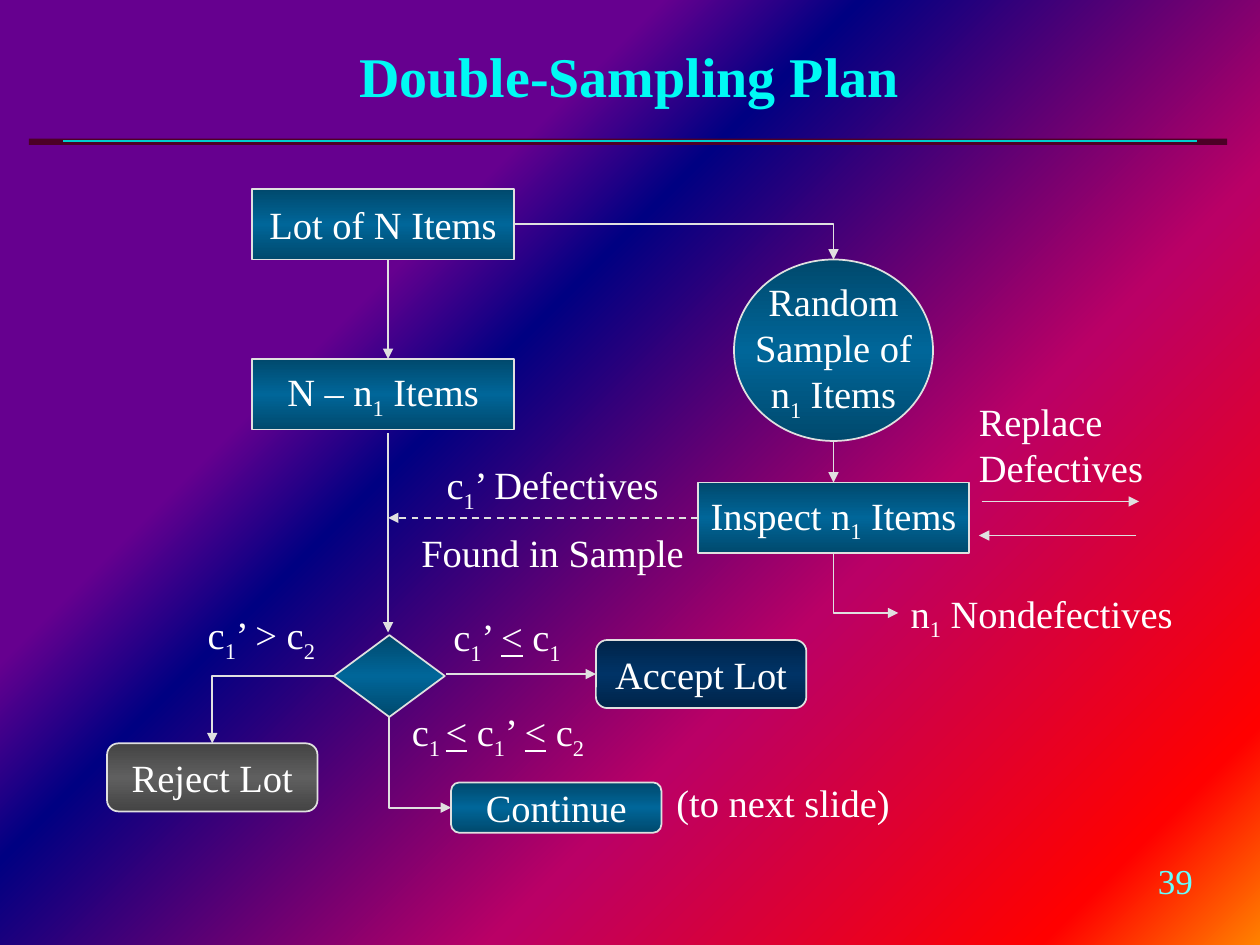
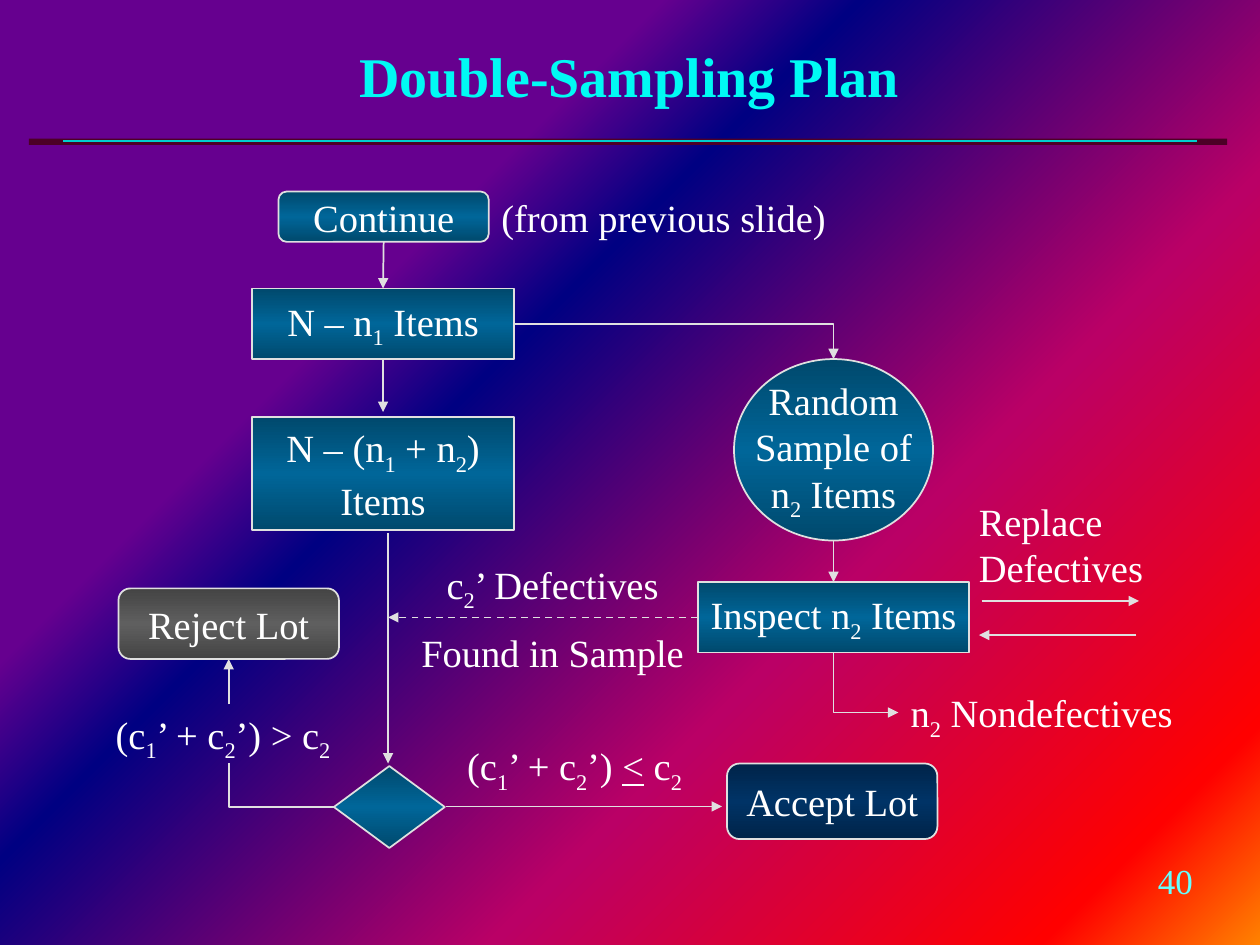
from collections import namedtuple

from lxml.etree import SubElement
from pptx import Presentation
from pptx.dml.color import RGBColor
from pptx.enum.dml import MSO_LINE
from pptx.enum.shapes import MSO_CONNECTOR, MSO_SHAPE
from pptx.enum.text import MSO_ANCHOR, MSO_AUTO_SIZE, PP_ALIGN
from pptx.oxml.ns import qn
from pptx.util import Inches, Pt

SLIDE_W, SLIDE_H = Inches(10), Inches(7.5)
COL, ROW = SLIDE_W / 100, SLIDE_H / 75

WHITE = RGBColor(0xFF, 0xFF, 0xFF)
BLACK = RGBColor(0x00, 0x00, 0x00)
OUTLINE = RGBColor(0xE0, 0xE0, 0xE0)
TITLE_CYAN = RGBColor(0x00, 0xFA, 0xF4)
NUMBER_CYAN = RGBColor(0x66, 0xFF, 0xFF)
RULE_TEAL = RGBColor(0x00, 0xCE, 0xCE)
BAND_MAROON = RGBColor(0x4C, 0x00, 0x26)
VIOLET = RGBColor(0x66, 0x00, 0x8F)
INDIGO = RGBColor(0x00, 0x00, 0x82)
MAGENTA = RGBColor(0xBA, 0x00, 0x66)
RED = RGBColor(0xFF, 0x00, 0x00)
ORANGE = RGBColor(0xFF, 0x82, 0x00)

BLUE = (RGBColor(0x00, 0x49, 0x6D), RGBColor(0x00, 0x66, 0x99))
NAVY = (RGBColor(0x00, 0x24, 0x49), RGBColor(0x00, 0x33, 0x66))
GREY = (RGBColor(0x44, 0x44, 0x44), RGBColor(0x5F, 0x5F, 0x5F))
SUNSET = [(30, VIOLET), (39, INDIGO), (65, MAGENTA), (90, RED), (100, ORANGE)]

RECT, ROUNDED = MSO_SHAPE.RECTANGLE, MSO_SHAPE.ROUNDED_RECTANGLE
OVAL, DIAMOND = MSO_SHAPE.OVAL, MSO_SHAPE.DIAMOND
STRAIGHT, ELBOW = MSO_CONNECTOR.STRAIGHT, MSO_CONNECTOR.ELBOW
LEFT_ALIGN, CENTER = PP_ALIGN.LEFT, PP_ALIGN.CENTER
MIDDLE, FIT_TEXT = MSO_ANCHOR.MIDDLE, MSO_AUTO_SIZE.SHAPE_TO_FIT_TEXT
DASH = MSO_LINE.DASH
TOP, LEFT, BOTTOM, RIGHT = range(4)

BODY_FONT = {"name": "Times New Roman", "size": Pt(22), "bold": False}
TITLE_FONT = {**BODY_FONT, "size": Pt(32), "bold": True}
NUMBER_FONT = {**BODY_FONT, "size": Pt(20)}

Area = namedtuple("Area", "left top width height")
Joint = namedtuple("Joint", "shape side")
PAGE = Area(0, 0, 100, 75)


def apply(target, values):
    """Set every attribute named in a dict of format values."""
    for name, value in values.items():
        setattr(target, name, value)


def place(area, x, y):
    """Turn grid cells counted from an area's corner into slide lengths."""
    return round((area.left + x) * COL), round((area.top + y) * ROW)


def bounds(area, box):
    """Give left, top, width and height of a box inside an area."""
    x, y, width, height = box
    return (*place(area, x, y), round(width * COL), round(height * ROW))


def blend(fill, owner, stops, angle):
    """Fill with a linear gradient of (percent, colour) stops."""
    fill.gradient()
    fill.gradient_angle = angle
    stop_list = owner.element.find(".//" + qn("a:gsLst"))
    stop_list.clear()
    for percent, color in stops:
        stop = SubElement(stop_list, qn("a:gs"), pos=str(percent * 1000))
        SubElement(stop, qn("a:srgbClr"), val=str(color))


def write(frame, text, align, font=BODY_FONT, color=WHITE, gap=0):
    """Write lines whose |-parts may be lowered (_) or underlined (*)."""
    for index, line in enumerate(text.split("\n")):
        paragraph = frame.paragraphs[0] if index == 0 else frame.add_paragraph()
        apply(paragraph, {"alignment": align, "space_before": Pt(gap if index else 0)})
        for part in line.split("|"):
            run = paragraph.add_run()
            run.text = part.lstrip("_*")
            apply(run.font, font)
            run.font.color.rgb = color
            if part.startswith("_"):
                run.font._element.set("baseline", "-25000")
            run.font.underline = part.startswith("*")


def add_label(slide, area, box, text, align=LEFT_ALIGN, **style):
    """Add free text that keeps its own line breaks."""
    label = slide.shapes.add_textbox(*bounds(area, box))
    apply(label.text_frame, {"word_wrap": False, "auto_size": FIT_TEXT})
    write(label.text_frame, text, align, **style)
    return label


def add_step(slide, area, kind, box, text="", shades=BLUE):
    """Add one outlined, shaded step of the flow chart."""
    step = slide.shapes.add_shape(kind, *bounds(area, box))
    step.shadow.inherit = False
    edge, core = shades
    blend(step.fill, step, [(0, edge), (50, core), (100, edge)], 270)
    step.line.color.rgb = OUTLINE
    step.line.width = Pt(1)
    if text:
        apply(step.text_frame, {"word_wrap": False, "vertical_anchor": MIDDLE})
        write(step.text_frame, text, CENTER)
    return step


def add_link(slide, area, start, end, arrow="tailEnd", color=OUTLINE, dash=None, bent=False):
    """Draw a line between two points or joints; a bent one runs level first."""
    ends = [(0, 0) if isinstance(e, Joint) else place(area, *e) for e in (start, end)]
    link = slide.shapes.add_connector(ELBOW if bent else STRAIGHT, *ends[0], *ends[1])
    for joint, connect in ((start, link.begin_connect), (end, link.end_connect)):
        if isinstance(joint, Joint):
            connect(joint.shape, joint.side)
    link.line.color.rgb = color
    apply(link.line, {"width": Pt(1), "dash_style": dash})
    properties = link.element.spPr
    if bent:
        properties.find(qn("a:prstGeom")).set("prst", "bentConnector2")
    if arrow:
        SubElement(properties.find(qn("a:ln")), qn("a:" + arrow), type="triangle")
    SubElement(properties, qn("a:effectLst"))


def add_title_shadow(run):
    """Give the title letters a dark shadow."""
    effects = SubElement(run.font._element, qn("a:effectLst"))
    run.font._element.insert(1, effects)
    shadow = SubElement(effects, qn("a:outerShdw"), dist="38100", dir="2700000")
    SubElement(shadow, qn("a:srgbClr"), val=str(BLACK))


def add_page(deck, number):
    """Start a slide with its title, band, rule and number."""
    slide = deck.slides.add_slide(deck.slide_layouts[5])
    band = slide.shapes.add_shape(RECT, *bounds(PAGE, (2.3, 11, 95.1, 0.5)))
    band.shadow.inherit = False
    band.fill.solid()
    band.fill.fore_color.rgb = BAND_MAROON
    band.line.fill.background()
    add_link(slide, PAGE, (5, 11.2), (95, 11.2), arrow=None, color=RULE_TEAL)
    add_label(slide, PAGE, (90.9, 67.7, 5.2, 4.3), str(number),
              font=NUMBER_FONT, color=NUMBER_CYAN)
    title = slide.shapes.title
    apply(title, dict(zip(Area._fields, bounds(PAGE, (3.3, 0.8, 93.3, 10.4)))))
    title.text_frame.vertical_anchor = MIDDLE
    write(title.text_frame, "Double-Sampling Plan", CENTER, TITLE_FONT, TITLE_CYAN)
    add_title_shadow(title.text_frame.paragraphs[0].runs[0])
    return slide


def draw_sampling(slide, area, source, n):
    """Draw the sampling and inspection branch that leaves the source step."""
    sample = add_step(slide, area, OVAL, (27.45, 2.8, 15.8, 14.4),
                      f"Random\nSample of\nn|_{n}| Items")
    inspect = add_step(slide, area, RECT, (24.6, 20.5, 21.5, 5.6), f"Inspect n|_{n}| Items")
    add_link(slide, area, Joint(source, RIGHT), Joint(sample, TOP), bent=True)
    add_link(slide, area, (35.35, 17.2), Joint(inspect, TOP))
    add_link(slide, area, Joint(inspect, LEFT), (0, 23.3), dash=DASH)
    add_label(slide, area, (1.6, 18.3, 22.9, 9.7),
              f"c|_{n}|’ Defectives\nFound in Sample", CENTER, gap=9)
    add_label(slide, area, (45.9, 13.3, 15.1, 8.3), "Replace\nDefectives")
    add_link(slide, area, (47.1, 22), (59.6, 22))
    add_link(slide, area, (59.4, 24.7), (46.9, 24.7))
    good = add_label(slide, area, (40.5, 28.5, 23, 4.7), f"n|_{n}| Nondefectives")
    add_link(slide, area, Joint(good, LEFT), Joint(inspect, BOTTOM),
             arrow="headEnd", bent=True)


def draw_first_decision(slide, area):
    """Draw the three outcomes of the first sample."""
    decision = add_step(slide, area, DIAMOND, (18, 2.4, 8.8, 6.5))
    reject = add_step(slide, area, ROUNDED, (0, 11, 16.7, 5.4), "Reject Lot", GREY)
    accept = add_step(slide, area, ROUNDED, (38.8, 2.8, 16.7, 5.4), "Accept Lot", NAVY)
    resume = add_step(slide, area, ROUNDED, (27.3, 14.1, 16.7, 4), "Continue")
    add_label(slide, area, (7, 0, 11.1, 4.7), "c|_1|’ > c|_2")
    add_label(slide, area, (26.5, 0.2, 11.1, 4.7), "c|_1|’ |*<| c|_1")
    add_label(slide, area, (23.2, 7.7, 16.7, 4.7), "c|_1 |*<| c|_1|’ |*<| c|_2")
    add_label(slide, area, (44.2, 13.3, 19, 4.7), "(to next slide)")
    add_link(slide, area, (26.9, 5.5), Joint(accept, LEFT))
    add_link(slide, area, Joint(decision, LEFT), Joint(reject, TOP), bent=True)
    add_link(slide, area, Joint(resume, LEFT), Joint(decision, BOTTOM),
             arrow="headEnd", bent=True)


def draw_second_decision(slide, area):
    """Draw the two outcomes of both samples together."""
    decision = add_step(slide, area, DIAMOND, (18.3, 14.1, 8.8, 6.5))
    reject = add_step(slide, area, ROUNDED, (1.2, 0, 17.5, 5.6), "Reject Lot", GREY)
    add_step(slide, area, ROUNDED, (49.5, 13.9, 16.7, 6), "Accept Lot", NAVY)
    too_many = add_label(slide, area, (0, 9.2, 20, 4.7), "(c|_1|’ + c|_2|’) > c|_2")
    add_label(slide, area, (27.9, 11.7, 19.8, 4.7), "(c|_1|’ + c|_2|’) |*<| c|_2")
    add_link(slide, area, (27.2, 17.3), (49.1, 17.3))
    add_link(slide, area, Joint(decision, LEFT), Joint(too_many, BOTTOM),
             arrow=None, bent=True)
    add_link(slide, area, (9.95, 9.2), Joint(reject, BOTTOM))


def build_first_sample(deck):
    """Build the slide of the first sample."""
    slide = add_page(deck, 39)
    lot = add_step(slide, PAGE, RECT, (20, 15, 20.8, 5.6), "Lot of N Items")
    add_step(slide, PAGE, RECT, (20, 28.5, 20.8, 5.6), "N – n|_1| Items")
    add_link(slide, PAGE, (30.8, 20.6), (30.8, 28.5))
    add_link(slide, PAGE, (30.8, 34.4), (30.8, 50.2))
    draw_sampling(slide, Area(30.8, 17.8, 64, 33), lot, 1)
    draw_first_decision(slide, Area(8.5, 48, 64, 18))


def build_second_sample(deck):
    """Build the slide of the second sample."""
    slide = add_page(deck, 40)
    resume = add_step(slide, PAGE, ROUNDED, (22.1, 15.2, 16.7, 4), "Continue")
    add_label(slide, PAGE, (38.8, 14.9, 27.8, 4.7), "(from previous slide)")
    rest = add_step(slide, PAGE, RECT, (20, 22.9, 20.8, 5.6), "N – n|_1| Items")
    add_step(slide, PAGE, RECT, (20, 33.1, 20.8, 9), "N – (n|_1| + n|_2|)\nItems")
    add_link(slide, PAGE, Joint(resume, BOTTOM), Joint(rest, TOP))
    add_link(slide, PAGE, Joint(rest, BOTTOM), (30.4, 32.7))
    add_link(slide, PAGE, (30.8, 42.3), (30.8, 60.6))
    draw_sampling(slide, Area(30.8, 25.7, 64, 33), rest, 2)
    draw_second_decision(slide, Area(8.2, 46.7, 67, 21))


def main():
    """Build both slides and save the deck."""
    deck = Presentation()
    apply(deck, {"slide_width": SLIDE_W, "slide_height": SLIDE_H})
    master = deck.slide_master
    blend(master.background.fill, master, SUNSET, 315)
    build_first_sample(deck)
    build_second_sample(deck)
    deck.save("out.pptx")


if __name__ == "__main__":
    main()
